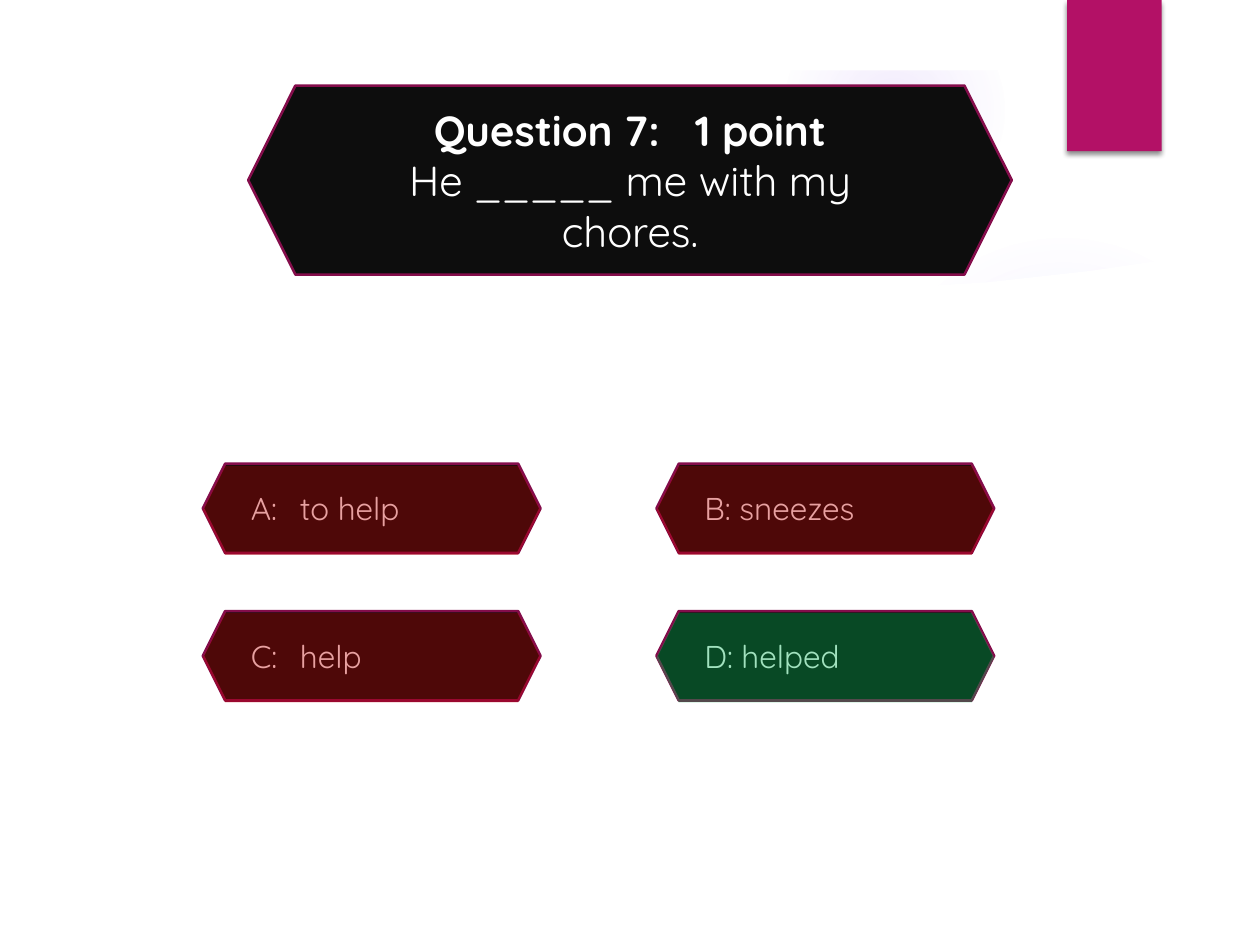
import pptx
import pptx.dml.color
import pptx.enum.shapes
import pptx.enum.text
import pptx.oxml
import pptx.oxml.ns
import pptx.util
from pptx.util import Inches

SHAPES = pptx.enum.shapes.MSO_SHAPE
A_NS = pptx.oxml.ns.nsdecls("a")
FONT = "Quicksand"
WHITE, BLACK, GLOW = "FFFFFF", "0D0D0D", "9B6BF2"
PINK, DARK_PINK = "B31166", "840D4B"
WRONG, RIGHT = "C00000", "00B050"

# Background glows: left, top, diameter, (stop position, opacity) in percent
GLOWS = [
    (0, 3.17, 2.58, [(0, 8), (36, 8), (72, 0)]),
    (6.89, 1.83, 3.08, [(0, 7), (36, 6), (69, 0)]),
    (6.22, 0, 1.75, [(0, 14), (36, 7), (73, 0)]),
    (6.89, 6.42, 1.08, [(0, 14), (36, 7), (66, 0)]),
    (0, 2.92, 4.58, [(0, 11), (36, 10), (75, 0)]),
]
SHEEN = [(6.99, 2.34), (7.49, 2.32), (8.2, 2.26), (8.95, 2.17), (9.56, 2.08),
         (9.51, 1.74), (9.01, 1.9), (8.5, 2.03), (8.01, 2.13), (7.47, 2.23),
         (6.96, 2.29)]
PANEL = [(0.53, 2.03), (0.53, 6.99), (9.47, 6.99), (9.47, 2.03), (8.66, 2.15),
         (7.85, 2.24), (7.04, 2.29), (6.25, 2.33), (5.48, 2.34), (4.74, 2.34),
         (4.04, 2.33), (3.38, 2.3), (2.77, 2.26), (2.22, 2.22), (1.32, 2.13)]

# Answer grid
COLUMNS = (1.61, 5.21)
ROWS = (3.68, 4.85)
ANSWER_SIZE = (2.68, 0.71)
TINT_DROP = 0.015
ANSWERS = [  # column, row, text, tint
    (1, 1, "D: helped", RIGHT),
    (0, 1, "C:\thelp", WRONG),
    (1, 0, "B: sneezes", WRONG),
    (0, 0, "A:\tto help", WRONG),
]


def rgb(value):
    return pptx.dml.color.RGBColor.from_string(value)


def set_fill(shape, color, opacity=100):
    shape.fill.solid()
    shape.fill.fore_color.rgb = rgb(color)
    if opacity < 100:
        tone = shape._element.spPr.find(".//" + pptx.oxml.ns.qn("a:srgbClr"))
        tone.append(pptx.oxml.parse_xml(f'<a:alpha {A_NS} val="{opacity * 1000}"/>'))


def add_preset(slide, kind, box, color, opacity=100, outline=None):
    shape = slide.shapes.add_shape(kind, *map(Inches, box))
    shape.shadow.inherit = False
    set_fill(shape, color, opacity)
    if outline:
        shape.line.color.rgb = rgb(outline)
        shape.line.width = pptx.util.Pt(1.5)
    else:
        shape.line.fill.background()
    return shape


def add_outline(slide, points, color, opacity=100):
    corners = [(Inches(x), Inches(y)) for x, y in points]
    builder = slide.shapes.build_freeform(*corners[0])
    builder.add_line_segments(corners[1:])
    shape = builder.convert_to_shape()
    shape.shadow.inherit = False
    set_fill(shape, color, opacity)
    shape.line.fill.background()
    return shape


def add_glow(slide, left, top, diameter, stops):
    glow = add_preset(slide, SHAPES.OVAL, (left, top, diameter, diameter), GLOW)
    stop_xml = "".join(
        f'<a:gs pos="{position * 1000}"><a:srgbClr val="{GLOW}">'
        f'<a:alpha val="{opacity * 1000}"/></a:srgbClr></a:gs>'
        for position, opacity in stops)
    gradient = pptx.oxml.parse_xml(
        f'<a:gradFill {A_NS}><a:gsLst>{stop_xml}</a:gsLst><a:path path="circle">'
        '<a:fillToRect l="50000" t="50000" r="50000" b="50000"/></a:path></a:gradFill>')
    properties = glow._element.spPr
    properties.replace(properties.find(pptx.oxml.ns.qn("a:solidFill")), gradient)


def add_ribbon(slide):
    ribbon = add_preset(slide, SHAPES.RECTANGLE, (8.47, 0, 0.75, 1.2), PINK)
    effects = ribbon._element.spPr.find(pptx.oxml.ns.qn("a:effectLst"))
    effects.append(pptx.oxml.parse_xml(
        f'<a:outerShdw {A_NS} blurRad="{pptx.util.Pt(3)}" dist="{pptx.util.Pt(2)}" '
        'dir="5400000" rotWithShape="0"><a:srgbClr val="000000">'
        '<a:alpha val="45000"/></a:srgbClr></a:outerShdw>'))


def write_line(paragraph, text, size, align, bold=False):
    paragraph.text = text
    paragraph.alignment = align
    formats = {"name": FONT, "size": pptx.util.Pt(size), "bold": bold}
    for run in paragraph.runs:
        for attribute, value in formats.items():
            setattr(run.font, attribute, value)
        run.font.color.rgb = rgb(WHITE)


def add_hexagon(slide, box):
    hexagon = add_preset(slide, SHAPES.HEXAGON, box, BLACK, outline=DARK_PINK)
    hexagon.text_frame.word_wrap = True
    hexagon.text_frame.vertical_anchor = pptx.enum.text.MSO_ANCHOR.MIDDLE
    return hexagon.text_frame


def add_answer(slide, column, row, text):
    frame = add_hexagon(slide, (COLUMNS[column], ROWS[row], *ANSWER_SIZE))
    paragraph = frame.paragraphs[0]
    paragraph._p.get_or_add_pPr().append(pptx.oxml.parse_xml(
        f'<a:tabLst {A_NS}><a:tab pos="{Inches(0.39)}" algn="l"/></a:tabLst>'))
    write_line(paragraph, text, 18, pptx.enum.text.PP_ALIGN.LEFT)


def add_question(slide):
    frame = add_hexagon(slide, (1.97, 0.68, 6.06, 1.5))
    center = pptx.enum.text.PP_ALIGN.CENTER
    write_line(frame.paragraphs[0], "Question 7:   1 point", 24, center, bold=True)
    write_line(frame.add_paragraph(), "He _____ me with my chores.", 24, center)


def add_background(slide):
    for glow in GLOWS:
        add_glow(slide, *glow)
    add_outline(slide, SHEEN, WHITE, 20).rotation = 350.2
    add_outline(slide, PANEL, WHITE)
    border = add_preset(slide, SHAPES.FRAME, (0, 0, 10, 7.5), WHITE)
    border.adjustments[0] = 0.56 / 7.5
    add_ribbon(slide)


def main():
    deck = pptx.Presentation()
    deck.slide_width, deck.slide_height = Inches(10), Inches(7.5)
    slide = deck.slides.add_slide(deck.slide_layouts[6])
    add_background(slide)
    for column, row, text, _ in ANSWERS:
        add_answer(slide, column, row, text)
    add_question(slide)
    # Tints that reveal the right and wrong answers
    for column, row, _, tint in ANSWERS:
        box = (COLUMNS[column], ROWS[row] + TINT_DROP, *ANSWER_SIZE)
        add_preset(slide, SHAPES.HEXAGON, box, tint, opacity=37)
    deck.save("out.pptx")


if __name__ == "__main__":
    main()
